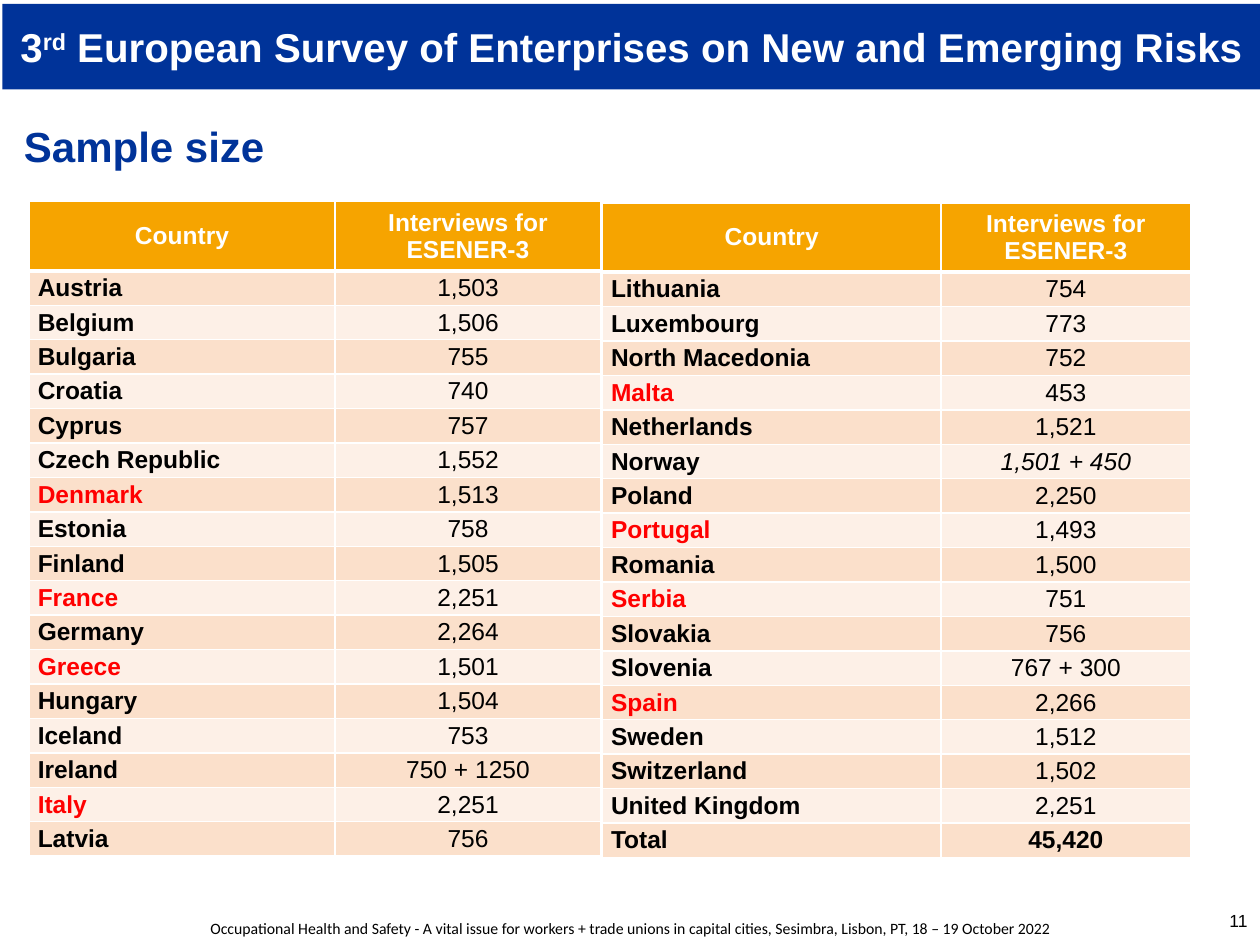
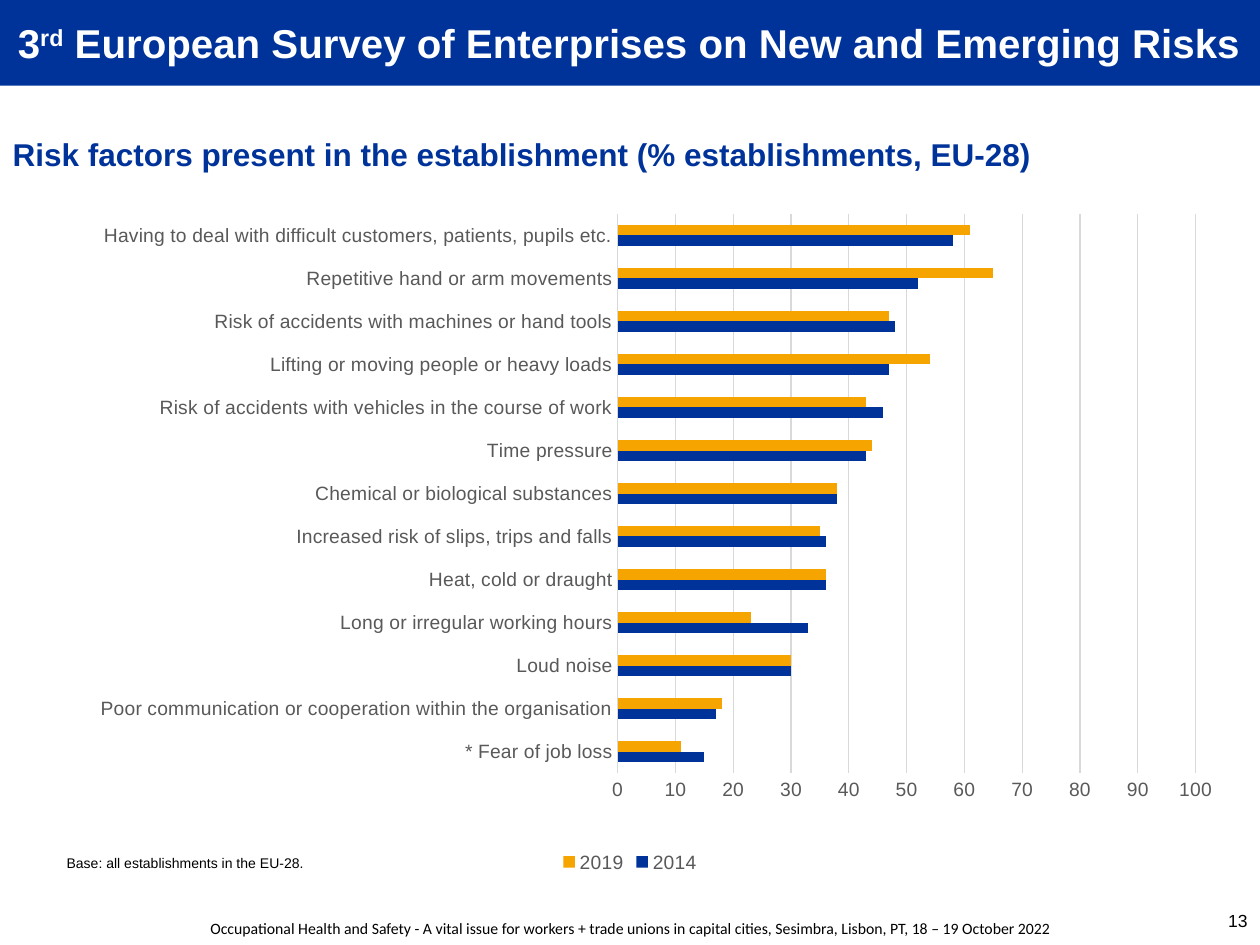
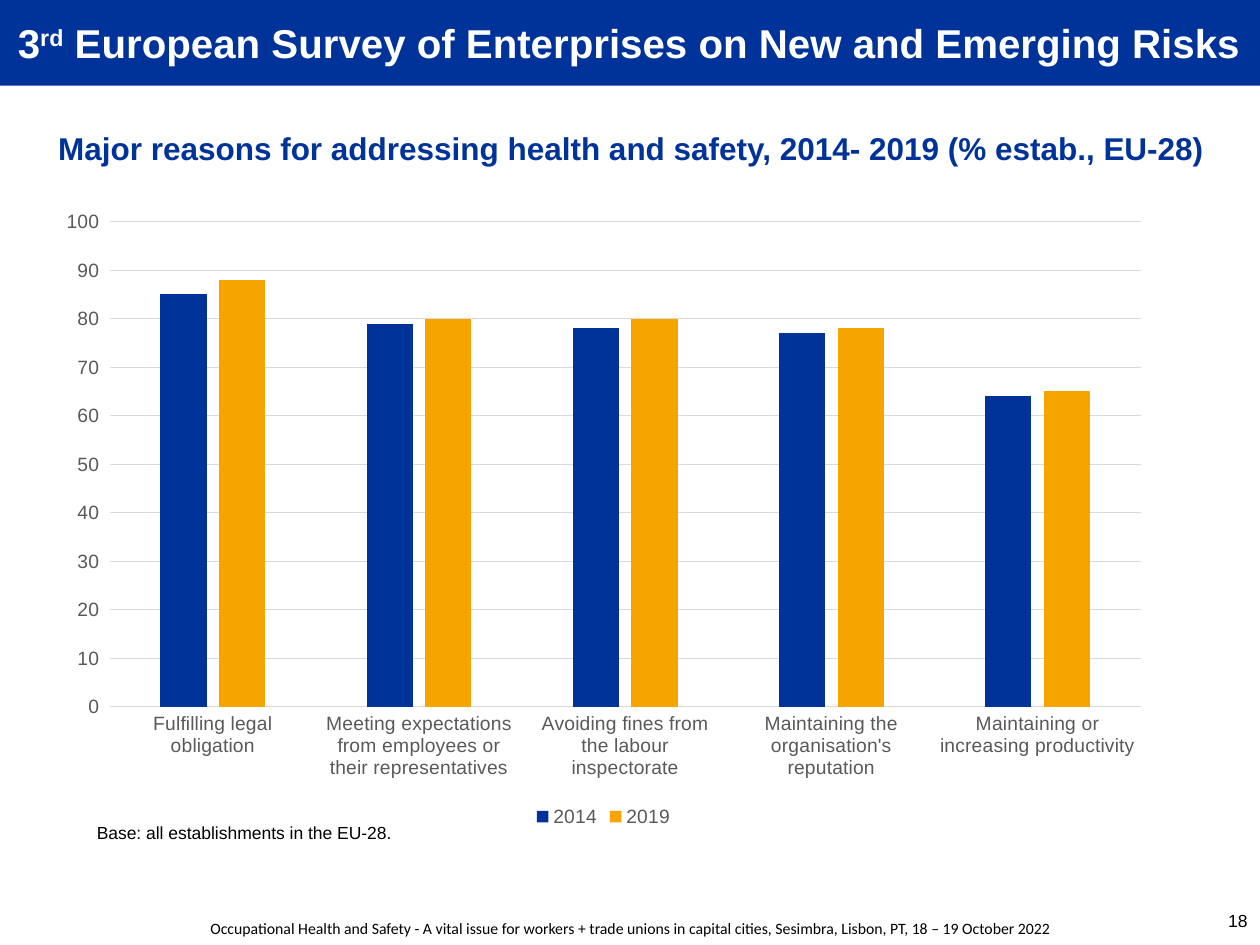
from lxml import etree
from pptx import Presentation
from pptx.chart.data import CategoryChartData
from pptx.dml.color import RGBColor
from pptx.enum.chart import XL_CHART_TYPE, XL_LEGEND_POSITION, XL_TICK_MARK
from pptx.enum.shapes import MSO_SHAPE
from pptx.enum.text import MSO_ANCHOR, MSO_AUTO_SIZE, PP_ALIGN
from pptx.oxml import parse_xml
from pptx.oxml.ns import nsdecls, qn
from pptx.util import Inches, Pt

LEFT, CENTER, RIGHT = PP_ALIGN.LEFT, PP_ALIGN.CENTER, PP_ALIGN.RIGHT
JUSTIFY = PP_ALIGN.JUSTIFY
TOP, MIDDLE, BOTTOM = MSO_ANCHOR.TOP, MSO_ANCHOR.MIDDLE, MSO_ANCHOR.BOTTOM
BARS, COLUMNS = XL_CHART_TYPE.BAR_CLUSTERED, XL_CHART_TYPE.COLUMN_CLUSTERED
LEGEND_BOTTOM = XL_LEGEND_POSITION.BOTTOM
NO_TICKS = XL_TICK_MARK.NONE
RECTANGLE = MSO_SHAPE.RECTANGLE
NO_AUTOFIT = MSO_AUTO_SIZE.NONE

BLUE, ORANGE, WHITE, BLACK, RED = "003399", "F6A400", "FFFFFF", "000000", "FF0000"
GREY, GRID = "595959", "D9D9D9"
ROW_FILLS = ("FBE0CB", "FDF0E7")
YEAR_COLORS = {"2014": BLUE, "2019": ORANGE}

FOOTER = ("Occupational Health and Safety - A vital issue for workers + trade unions "
          "in capital cities, Sesimbra, Lisbon, PT, 18 – 19 October 2022")
BASE_NOTE = "Base: all establishments in the EU-28."
TABLE_HEADER = ("Country", "Interviews for ESENER-3")
HEADER_HEIGHT, TABLE_HEIGHT = 0.55, 5.2

HIGHLIGHTED = {"Denmark", "France", "Greece", "Italy", "Malta", "Portugal", "Serbia", "Spain"}
FIRST_COUNTRIES = [
    ("Austria", "1,503"), ("Belgium", "1,506"), ("Bulgaria", "755"), ("Croatia", "740"),
    ("Cyprus", "757"), ("Czech Republic", "1,552"), ("Denmark", "1,513"), ("Estonia", "758"),
    ("Finland", "1,505"), ("France", "2,251"), ("Germany", "2,264"), ("Greece", "1,501"),
    ("Hungary", "1,504"), ("Iceland", "753"), ("Ireland", "750 + 1250"), ("Italy", "2,251"),
    ("Latvia", "756"),
]
LAST_COUNTRIES = [
    ("Lithuania", "754"), ("Luxembourg", "773"), ("North Macedonia", "752"), ("Malta", "453"),
    ("Netherlands", "1,521"), ("Norway", "1,501 + 450"), ("Poland", "2,250"),
    ("Portugal", "1,493"), ("Romania", "1,500"), ("Serbia", "751"), ("Slovakia", "756"),
    ("Slovenia", "767 + 300"), ("Spain", "2,266"), ("Sweden", "1,512"),
    ("Switzerland", "1,502"), ("United Kingdom", "2,251"), ("Total", "45,420"),
]
RISK_FACTORS = [
    ("* Fear of job loss", 15, 11),
    ("Poor communication or cooperation within the organisation", 17, 18),
    ("Loud noise", 30, 30),
    ("Long or irregular working hours", 33, 23),
    ("Heat, cold or draught", 36, 36),
    ("Increased risk of slips, trips and falls", 36, 35),
    ("Chemical or biological substances", 38, 38),
    ("Time pressure", 43, 44),
    ("Risk of accidents with vehicles in the course of work", 46, 43),
    ("Lifting or moving people or heavy loads", 47, 54),
    ("Risk of accidents with machines or hand tools", 48, 47),
    ("Repetitive hand or arm movements", 52, 65),
    ("Having to deal with difficult customers, patients, pupils etc.", 58, 61),
]
REASONS = [
    ("Fulfilling legal obligation", 85, 88),
    ("Meeting expectations from employees or their representatives", 79, 80),
    ("Avoiding fines from the labour inspectorate", 78, 80),
    ("Maintaining the organisation's reputation", 77, 78),
    ("Maintaining or increasing productivity", 64, 65),
]


def color(value):
    """Turn a hex string into a colour."""
    return RGBColor.from_string(value)


def inches(box):
    """Turn a sequence of numbers into lengths."""
    return [Inches(length) for length in box]


def style_font(font, size, hex_color, bold=False, name="Arial"):
    """Set face, size, colour and weight of a font."""
    font.name, font.size, font.bold = name, Pt(size), bold
    font.color.rgb = color(hex_color)


def write(frame, text, size, hex_color, bold=False, align=LEFT, name="Arial"):
    """Write one paragraph into a text frame and return it."""
    para = frame.paragraphs[0]
    para.alignment = align
    style_font(para.font, size, hex_color, bold, name)
    para.add_run().text = text
    return para


def add_text(page, box, text, size, align=LEFT, anchor=MIDDLE, name="Arial"):
    """Place a wrapping black text box."""
    frame = page.shapes.add_textbox(*inches(box)).text_frame
    frame.word_wrap, frame.vertical_anchor = True, anchor
    write(frame, text, size, BLACK, align=align, name=name)


def add_title(page, box, text, size, align=LEFT, anchor=MIDDLE, inset=0.1):
    """Move, fill and format the title placeholder."""
    title = page.shapes.title
    title.left, title.top, title.width, title.height = inches(box)
    frame = title.text_frame
    frame.auto_size, frame.word_wrap, frame.vertical_anchor = NO_AUTOFIT, True, anchor
    frame.margin_left = Inches(inset)
    frame.margin_top = frame.margin_bottom = 0
    write(frame, text, size, BLUE, True, align)


def add_band(page, left=0, top=0):
    """Draw the blue survey band."""
    band = page.shapes.add_shape(RECTANGLE, *inches((left, top, 10, 0.68)))
    band.shadow.inherit = False
    band.fill.solid()
    band.fill.fore_color.rgb = color(BLUE)
    band.line.fill.background()
    frame = band.text_frame
    frame.word_wrap, frame.vertical_anchor = True, MIDDLE
    para = write(frame, "3", 23, WHITE, True, CENTER)
    ordinal = para.add_run()
    ordinal.text = "rd"
    ordinal.font._element.set("baseline", "30000")
    para.add_run().text = " European Survey of Enterprises on New and Emerging Risks"


def add_page(deck, number, band_at=(0, 0)):
    """Add a page with the shared band, footer and page number."""
    page = deck.slides.add_slide(deck.slide_layouts[5])
    add_text(page, (9.33, 7.11, 0.67, 0.4), str(number), 10, RIGHT)
    add_text(page, (0, 6.93, 10, 0.56), FOOTER, 9, CENTER, BOTTOM, "Calibri")
    add_band(page, *band_at)
    return page


def add_borders(cell, bottom_width):
    """Give a cell white borders."""
    properties = cell._tc.get_or_add_tcPr()
    for side in "LRTB":
        width = bottom_width if side == "B" else 1
        line = parse_xml(f'<a:ln{side} {nsdecls("a")} w="{Pt(width)}"/>')
        fill = etree.SubElement(line, qn("a:solidFill"))
        etree.SubElement(fill, qn("a:srgbClr"), val=WHITE)
        properties.append(line)


def fill_cell(cell, text, fill, hex_color, bold, align, bottom_width=1):
    """Write and format one table cell."""
    add_borders(cell, bottom_width)
    cell.fill.solid()
    cell.fill.fore_color.rgb = color(fill)
    cell.margin_left = cell.margin_right = Inches(0.07)
    cell.margin_top = cell.margin_bottom = 0
    cell.vertical_anchor = MIDDLE
    return write(cell.text_frame, text, 14, hex_color, bold, align)


def add_country_table(page, left, top, widths, countries):
    """Place a table of countries and interview counts."""
    box = (left, top, sum(widths), TABLE_HEIGHT)
    table = page.shapes.add_table(len(countries) + 1, 2, *inches(box)).table
    for column, width in zip(table.columns, widths):
        column.width = Inches(width)
    for row in table.rows:
        row.height = Inches((TABLE_HEIGHT - HEADER_HEIGHT) / len(countries))
    table.rows[0].height = Inches(HEADER_HEIGHT)
    for index, heading in enumerate(TABLE_HEADER):
        fill_cell(table.cell(0, index), heading, ORANGE, WHITE, True, CENTER, 3)
    for index, (country, interviews) in enumerate(countries):
        fill = ROW_FILLS[index % 2]
        name_color = RED if country in HIGHLIGHTED else BLACK
        fill_cell(table.cell(index + 1, 0), country, fill, name_color, True, LEFT)
        para = fill_cell(table.cell(index + 1, 1), interviews, fill, BLACK,
                         country == "Total", CENTER)
        para.font.italic = country == "Norway"


def add_year_chart(page, box, kind, rows, overlap=0, number_format="General"):
    """Place a clustered chart comparing 2014 with 2019."""
    labels, *year_values = zip(*rows)
    data = CategoryChartData()
    data.categories = labels
    for year, values in zip(YEAR_COLORS, year_values):
        data.add_series(year, values)
    chart = page.shapes.add_chart(kind, *inches(box), data).chart
    style_font(chart.font, 11, BLACK)
    chart.has_title = False
    chart.has_legend = True
    chart.legend.position, chart.legend.include_in_layout = LEGEND_BOTTOM, False
    plot = chart.plots[0]
    plot.gap_width, plot.overlap, plot.vary_by_categories = 219, overlap, False
    for series in plot.series:
        series.format.fill.solid()
        series.format.fill.fore_color.rgb = color(YEAR_COLORS[series.name])
    categories, scale = chart.category_axis, chart.value_axis
    scale.minimum_scale, scale.maximum_scale, scale.major_unit = 0, 100, 10
    scale.has_major_gridlines = True
    scale.format.line.fill.background()
    scale.tick_labels.number_format = number_format
    scale.tick_labels.number_format_is_linked = False
    for axis in (categories, scale):
        axis.major_tick_mark = axis.minor_tick_mark = NO_TICKS
    for line in (categories.format.line, scale.major_gridlines.format.line):
        line.color.rgb, line.width = color(GRID), Pt(0.75)
    for font in (categories.tick_labels.font, scale.tick_labels.font, chart.legend.font):
        style_font(font, 11, GREY)
    return chart


def set_plot_area(chart, left, top, width, height):
    """Fix the inner plot area as fractions of the chart."""
    area = chart._chartSpace.chart.plotArea
    for old in area.findall(qn("c:layout")):
        area.remove(old)
    layout = parse_xml(f'<c:layout {nsdecls("c")}/>')
    manual = etree.SubElement(layout, qn("c:manualLayout"))
    settings = {"layoutTarget": "inner", "xMode": "edge", "yMode": "edge",
                "x": left, "y": top, "w": width, "h": height}
    for tag, value in settings.items():
        etree.SubElement(manual, qn(f"c:{tag}"), val=str(value))
    area.insert(0, layout)


def build_sample_size(deck):
    """Build the page of interviews by country."""
    page = add_page(deck, 11, (0.02, 0.03))
    add_title(page, (0, 0.89, 8.27, 0.53), "Sample size", 24, inset=0.19)
    add_country_table(page, 0.23, 1.6, (2.43, 2.11), FIRST_COUNTRIES)
    add_country_table(page, 4.78, 1.61, (2.69, 1.98), LAST_COUNTRIES)


def build_risk_factors(deck):
    """Build the page of risk factors."""
    page = add_page(deck, 13)
    chart = add_year_chart(page, (0.12, 1.42, 9.76, 5.55), BARS, RISK_FACTORS)
    set_plot_area(chart, 0.49, 0.05, 0.47, 0.8)
    add_title(page, (0, 1.07, 10, 0.54),
              "Risk factors present in the establishment (% establishments, EU-28)",
              18, anchor=TOP)
    add_text(page, (0.43, 6.73, 7.64, 0.23), BASE_NOTE, 8, JUSTIFY)


def build_reasons(deck):
    """Build the page of reasons for addressing health and safety."""
    page = add_page(deck, 18)
    add_title(page, (0.01, 0.9, 10, 0.54),
              "Major reasons for addressing health and safety, 2014- 2019 (% estab., EU-28)",
              18, CENTER)
    add_text(page, (0.67, 6.47, 8.27, 0.27), BASE_NOTE, 10, JUSTIFY)
    add_year_chart(page, (0.35, 1.57, 8.88, 5.04), COLUMNS, REASONS, -27, "#,##0\\ ")


def main():
    """Build and save the deck."""
    deck = Presentation()
    deck.slide_width, deck.slide_height = Inches(10), Inches(7.5)
    build_sample_size(deck)
    build_risk_factors(deck)
    build_reasons(deck)
    deck.save("out.pptx")


if __name__ == "__main__":
    main()
